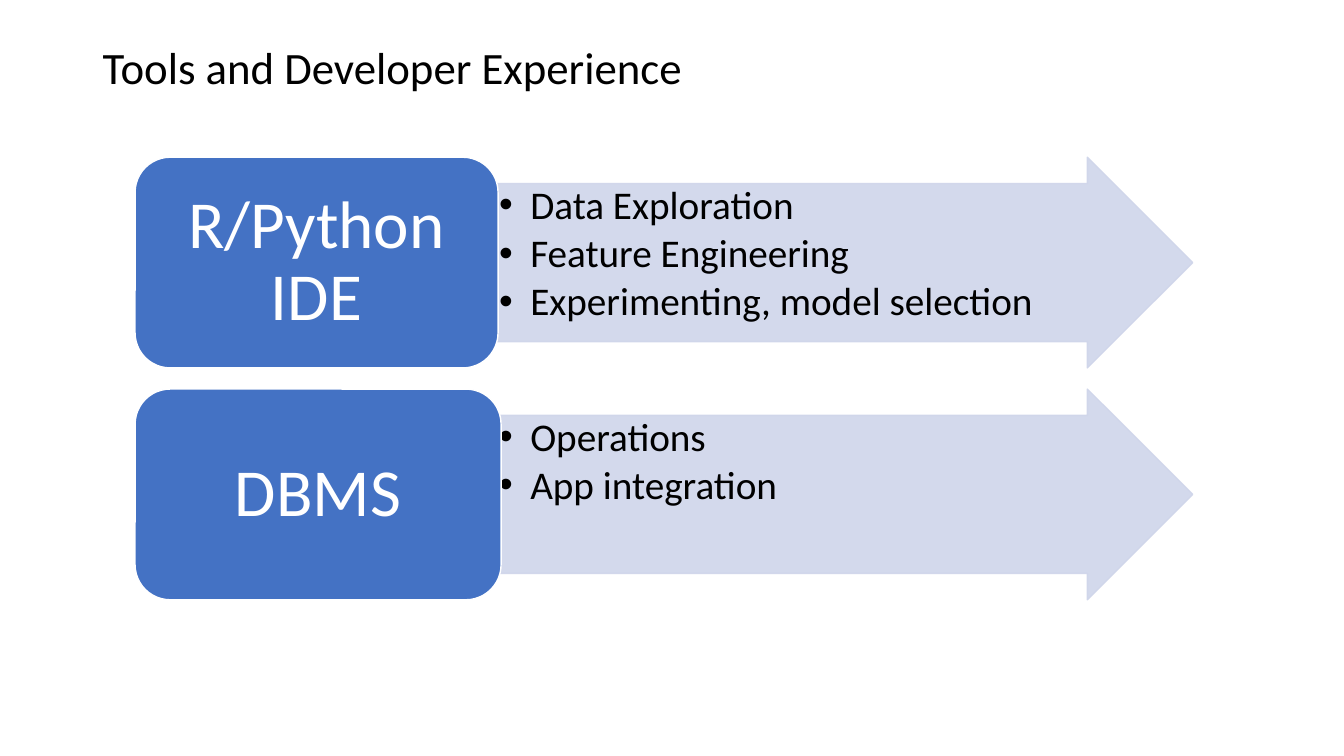
from dataclasses import dataclass

from lxml.etree import SubElement
from pptx import Presentation
from pptx.dml.color import RGBColor
from pptx.enum.shapes import MSO_SHAPE
from pptx.enum.text import MSO_ANCHOR, PP_ALIGN
from pptx.oxml.ns import qn
from pptx.util import Inches, Pt


@dataclass(frozen=True)
class Theme:
    font: str = "Calibri"
    ink: str = "000000"
    white: str = "FFFFFF"
    blue: str = "4472C4"
    pale: str = "CFD5EA"
    title: int = 32
    label: int = 48
    item: int = 28


def write(frame, lines, theme, size, color, align=PP_ALIGN.LEFT,
          anchor=MSO_ANCHOR.TOP, inset=(0.1, 0.05), after=0, indent=0):
    """Fill a text frame; an indent in inches turns the lines into bullets."""
    frame.word_wrap = True
    frame.vertical_anchor = anchor
    frame.margin_left = frame.margin_right = Inches(inset[0])
    frame.margin_top = frame.margin_bottom = Inches(inset[1])
    for i, line in enumerate(lines):
        para = frame.paragraphs[0] if i == 0 else frame.add_paragraph()
        para.alignment = align
        para.line_spacing = 0.9
        para.space_after = Pt(after)
        if indent:
            para.level = 1
            props = para._p.get_or_add_pPr()
            props.set("marL", str(Inches(indent)))
            props.set("indent", str(-Inches(indent)))
            SubElement(props, qn("a:buFont")).set("typeface", "Arial")
            SubElement(props, qn("a:buChar")).set("char", "•")
        run = para.add_run()
        run.text = line
        run.font.name = theme.font
        run.font.size = Pt(size)
        run.font.color.rgb = RGBColor.from_string(color)


class Deck:
    def __init__(self, theme):
        self.theme = theme
        self.file = Presentation()
        self.file.slide_width = Inches(13.33)
        self.file.slide_height = Inches(7.5)
        self.slide = self.file.slides.add_slide(self.file.slide_layouts[6])

    def title(self, text):
        box = self.slide.shapes.add_textbox(
            Inches(0.92), Inches(0.4), Inches(11.5), Inches(1.45))
        write(box.text_frame, [text], self.theme, self.theme.title, self.theme.ink)

    def shape(self, kind, place, fill, line, alpha=100):
        item = self.slide.shapes.add_shape(kind, *map(Inches, place))
        item.shadow.inherit = False
        item.fill.solid()
        item.line.fill.solid()
        item.line.width = Pt(1)
        for paint, color in ((item.fill, fill), (item.line.fill, line)):
            paint.fore_color.rgb = RGBColor.from_string(color)
        if alpha < 100:
            for tone in item._element.spPr.iter(qn("a:srgbClr")):
                SubElement(tone, qn("a:alpha")).set("val", str(alpha * 1000))
        return item

    def arrow(self, place, lines):
        look = self.theme
        item = self.shape(MSO_SHAPE.RIGHT_ARROW, place, look.pale, look.pale, 90)
        item.adjustments[0] = 0.75
        item.adjustments[1] = 0.5
        write(item.text_frame, lines, look, look.item, look.ink,
              inset=(0.02, 0.02), after=look.item * 0.15, indent=0.31)

    def label(self, place, text):
        look = self.theme
        item = self.shape(MSO_SHAPE.ROUNDED_RECTANGLE, place, look.blue, look.white)
        write(item.text_frame, [text], look, look.label, look.white,
              align=PP_ALIGN.CENTER, anchor=MSO_ANCHOR.MIDDLE, inset=(0.2, 0.1))


TOOLS = [
    ("R/Python IDE", 3.6, ["Data Exploration", "Feature Engineering",
                           "Experimenting, model selection"]),
    ("DBMS", 3.63, ["Operations", "App integration"]),
]


def main():
    deck = Deck(Theme())
    deck.title("Tools and Developer Experience")
    top, step, height = 1.56, 2.3, 2.09
    for row, (name, width, tasks) in enumerate(TOOLS):
        y = top + row * step
        deck.arrow((4.93, y, 6.9, height), tasks)
        deck.label((1.34, y, width, height), name)
    deck.file.save("out.pptx")


if __name__ == "__main__":
    main()
